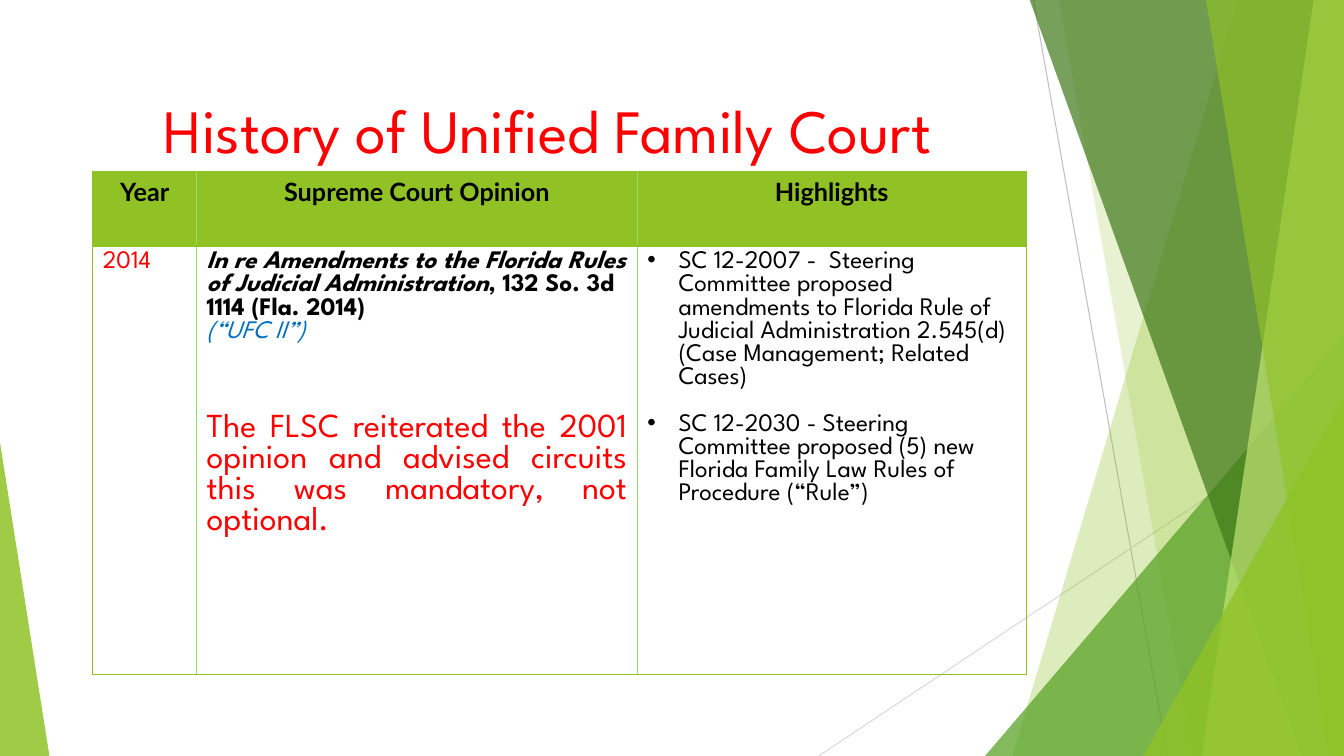
from lxml.etree import SubElement
from pptx import Presentation
from pptx.dml.color import RGBColor
from pptx.enum.shapes import MSO_CONNECTOR, MSO_SHAPE
from pptx.enum.text import MSO_ANCHOR, PP_ALIGN
from pptx.oxml import parse_xml
from pptx.oxml.ns import nsdecls, qn
from pptx.util import Inches, Pt

COLORS = dict(lime="90C226", green="54A021", forest="3F7819", pale="C0E474",
              border="94DE61", red="FF0000", blue="0070C0", black="000000",
              grey="BFBFBF", silver="D9D9D9")
HEAD_FONT, BODY_FONT = "Lato", "League Spartan"
TITLE = "History of Unified Family Court"

# Table text: a paragraph holds its runs (text, bold, italic) and its look
HEADERS = ["Year", "Supreme Court Opinion", "Highlights"]
BODY = [
    [dict(runs=[("2014", False, False)], color="red")],
    [dict(runs=[("In re Amendments to the Florida Rules of Judicial Administration", True, True),
                (", 132 So. 3d 1114 (Fla. 2014)", True, False)]),
     dict(runs=[("(“UFC II”)", False, True)], color="blue"),
     dict(runs=[("The FLSC reiterated the 2001 opinion and advised circuits this was "
                 "mandatory, not optional.", False, False)],
          color="red", size=24, align=PP_ALIGN.JUSTIFY, before=50)],
    [dict(runs=[("SC 12-2007 -  Steering Committee proposed amendments to Florida Rule of "
                 "Judicial Administration 2.545(d) (Case Management; Related Cases)",
                 False, False)], bullet=True),
     dict(runs=[("SC 12-2030 - Steering Committee proposed (5) new Florida Family Law Rules "
                 "of Procedure (“Rule”)", False, False)], bullet=True, before=16.6)],
]
COLS, ROWS = [1.03, 4.37, 3.86], [0.74, 4.25]

# Background, back to front
RIGHT, TOP, BOTTOM = 13.33, -0.01, 7.5
LINES = [((10.25, 0), (11.58, 7.5), "grey"), ((13.33, 4.03), (8.12, 7.5), "silver")]
# band: top x, bottom x; triangle: left, top, width, apex position
FACETS = [
    ("band", (12.28, 10.04), "lime", 30),
    ("band", (10.5, 11.83), "lime", 20),
    ("triangle", (9.77, 3.33, 3.56, 1), "green", 72),
    ("band", (10.21, 12.91), "forest", 70),
    ("band", (13.03, 11.92), "pale", 70),
    ("band", (11.96, 13.18), "lime", 65),
    ("triangle", (11.34, 3.93, 1.99, 1), "lime", 80),
    ("triangle", (0, 4.39, 0.49, 0), "lime", 85),
]


def rgb(name):
    return RGBColor.from_string(COLORS[name])


def add_line(slide, start, end, color):
    c = slide.shapes.add_connector(MSO_CONNECTOR.STRAIGHT, *map(Inches, start + end))
    c.line.color.rgb, c.line.width = rgb(color), Pt(0.75)
    SubElement(c._element.spPr, qn("a:effectLst"))


def add_facet(slide, kind, geometry, color, opacity):
    if kind == "band":
        top_x, bottom_x = geometry
        fb = slide.shapes.build_freeform(Inches(top_x), Inches(TOP))
        corners = [(RIGHT, TOP), (RIGHT, BOTTOM), (bottom_x, BOTTOM)]
        fb.add_line_segments([(Inches(x), Inches(y)) for x, y in corners])
        sp = fb.convert_to_shape()
    else:
        left, top, width, apex = geometry
        sp = slide.shapes.add_shape(MSO_SHAPE.ISOSCELES_TRIANGLE,
                                    *map(Inches, (left, top, width, BOTTOM - top)))
        sp.adjustments[0] = apex
    sp.shadow.inherit = False
    sp.line.fill.background()
    sp.fill.solid()
    sp.fill.fore_color.rgb = rgb(color)
    clr = sp._element.spPr.find(qn("a:solidFill"))[0]
    SubElement(clr, qn("a:alpha"), val=str(opacity * 1000))


def write(p, runs, color="black", size=18, align=PP_ALIGN.LEFT, before=0,
          bullet=False, font=BODY_FONT):
    p.alignment, p.space_before = align, Pt(before)
    p.font.name, p.font.size, p.font.color.rgb = font, Pt(size), rgb(color)
    for text, bold, italic in runs:
        r = p.add_run()
        r.text, r.font.bold, r.font.italic = text, bold, italic
    if bullet:
        pPr = p._p.get_or_add_pPr()
        pPr.set("marL", str(Inches(0.31)))
        pPr.set("indent", str(-Inches(0.31)))
        pPr.insert_element_before(
            parse_xml(f'<a:buChar {nsdecls("a")} char="•"/>'), "a:tabLst", "a:defRPr")


def set_borders(cell, col):
    sides = dict(L="border" if col else "lime",
                 R="border" if col < len(COLS) - 1 else "lime", T="lime", B="lime")
    tcPr = cell._tc.get_or_add_tcPr()
    for i, (side, color) in enumerate(sides.items()):
        tcPr.insert(i, parse_xml(
            f'<a:ln{side} {nsdecls("a")} w="{Pt(1)}"><a:solidFill>'
            f'<a:srgbClr val="{COLORS[color]}"/></a:solidFill></a:ln{side}>'))


def add_opinion_table(slide):
    table = slide.shapes.add_table(len(ROWS), len(COLS), Inches(0.92), Inches(1.7),
                                   Inches(sum(COLS)), Inches(sum(ROWS))).table
    for row, height in zip(table.rows, ROWS):
        row.height = Inches(height)
    for col, width in enumerate(COLS):
        table.columns[col].width = Inches(width)
        head, body = table.cell(0, col), table.cell(1, col)
        head.fill.solid()
        head.fill.fore_color.rgb = rgb("lime")
        body.fill.background()
        write(head.text_frame.paragraphs[0], [(HEADERS[col], True, False)],
              align=PP_ALIGN.CENTER, font=HEAD_FONT)
        tf = body.text_frame
        for i, paragraph in enumerate(BODY[col]):
            write(tf.add_paragraph() if i else tf.paragraphs[0], **paragraph)
        for cell in (head, body):
            set_borders(cell, col)


def main():
    prs = Presentation()
    prs.slide_width, prs.slide_height = Inches(13.33), Inches(7.5)
    slide = prs.slides.add_slide(prs.slide_layouts[6])

    # Background
    for line in LINES:
        add_line(slide, *line)
    for facet in FACETS:
        add_facet(slide, *facet)

    # Title
    tf = slide.shapes.add_textbox(*map(Inches, (0.74, 0.67, 9.4, 1.44))).text_frame
    tf.word_wrap, tf.vertical_anchor, tf.margin_top = True, MSO_ANCHOR.TOP, Inches(0.24)
    write(tf.paragraphs[0], [(TITLE, False, False)], color="red", size=44,
          align=PP_ALIGN.CENTER)

    add_opinion_table(slide)
    prs.save("out.pptx")


if __name__ == "__main__":
    main()
